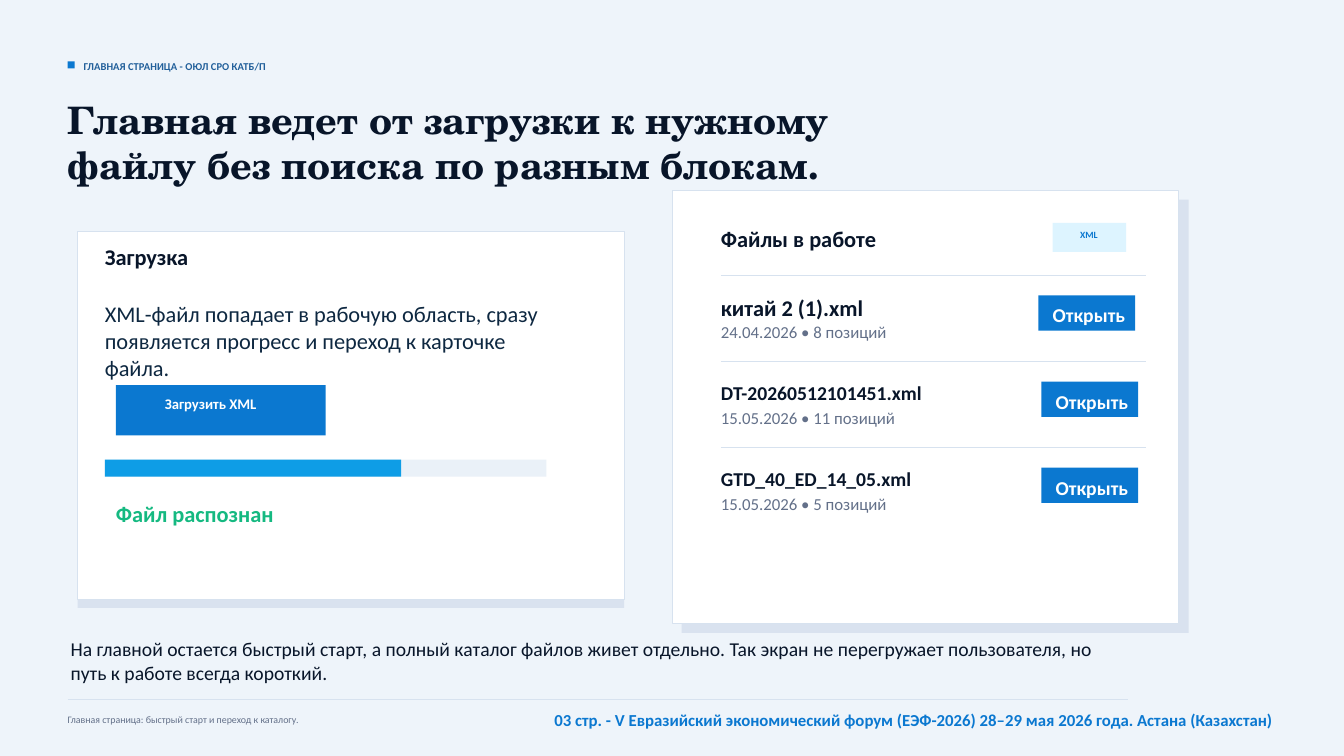
"""Build the slide about the home page: upload card, file list and footer."""
from dataclasses import dataclass

from lxml import etree
from pptx import Presentation
from pptx.dml.color import RGBColor
from pptx.enum.shapes import MSO_CONNECTOR, MSO_SHAPE
from pptx.enum.text import PP_ALIGN
from pptx.oxml.ns import qn
from pptx.util import Inches, Pt

RECT = MSO_SHAPE.RECTANGLE
LINE = MSO_CONNECTOR.STRAIGHT
LEFT, MID, RIGHT = PP_ALIGN.LEFT, PP_ALIGN.CENTER, PP_ALIGN.RIGHT
SANS, SERIF = "Calibri", "TeX Gyre Schola"
INK, NAVY, GREY = "081529", "0E2841", "637089"
BLUE, WHITE, EDGE, SHADE = "0B78D0", "FFFFFF", "D7E2EF", "D9E2EF"


@dataclass
class Box:
    x: float
    y: float
    w: float
    h: float
    fill: str
    edge: str = ""


@dataclass
class Text:
    x: float
    y: float
    w: float
    h: float
    text: str
    size: float
    color: str = INK
    bold: bool = True
    align: PP_ALIGN = LEFT
    font: str = SANS


@dataclass
class File:
    name: str
    meta: str
    size: float
    left: float


BOXES = [
    Box(0, 0, 13.33, 7.5, "EEF4FA"),
    Box(0.67, 0.61, 0.07, 0.07, BLUE),
    Box(0.77, 2.38, 5.42, 3.65, SHADE),
    Box(0.77, 2.3, 5.42, 3.65, WHITE, EDGE),
    Box(1.15, 3.82, 2.08, 0.5, BLUE),
    Box(1.04, 4.56, 4.38, 0.17, "EAF1F8"),
    Box(1.04, 4.56, 2.94, 0.17, "0E9DE6"),
    Box(6.76, 1.98, 5.03, 4.3, SHADE),
    Box(6.67, 1.89, 5.02, 4.3, WHITE, EDGE),
    Box(10.44, 2.21, 0.73, 0.29, "DDF4FF"),
]

TEXTS = [
    Text(0.83, 0.59, 3.75, 0.19, "ГЛАВНАЯ СТРАНИЦА - ОЮЛ СРО КАТБ/П", 7.5, "215F9A"),
    Text(0.67, 0.96, 8.12, 0.96,
         "Главная ведет от загрузки к нужному файлу без поиска по разным блокам.",
         27, font=SERIF),
    Text(1.04, 2.41, 1.67, 0.25, "Загрузка", 16),
    Text(1.04, 2.98, 4.64, 0.5,
         "XML-файл попадает в рабочую область, сразу появляется прогресс "
         "и переход к карточке файла.", 16, NAVY, False),
    Text(1.31, 3.92, 1.56, 0.19, "Загрузить XML", 10.5, WHITE, align=MID),
    Text(1.15, 4.96, 1.98, 0.19, "Файл распознан", 16, "15B981"),
    Text(7.15, 2.23, 2.19, 0.25, "Файлы в работе", 16),
    Text(10.56, 2.27, 0.48, 0.15, "XML", 6.8, BLUE, align=MID),
    Text(0.7, 6.32, 10.21, 0.4,
         "На главной остается быстрый старт, а полный каталог файлов живет отдельно. "
         "Так экран не перегружает пользователя, но путь к работе всегда короткий.",
         14, bold=False),
    Text(0.67, 7.08, 7.92, 0.19, "Главная страница: быстрый старт и переход к каталогу.",
         7.1, GREY, False),
    Text(5.19, 7.04, 7.44, 0.25,
         "03 стр. - V Евразийский экономический форум (ЕЭФ-2026) "
         "28–29 мая 2026 года. Астана (Казахстан)", 12, BLUE, align=RIGHT),
]

FILES = [
    File("китай 2 (1).xml", "24.04.2026 • 8 позиций", 16, 10.3),
    File("DT-20260512101451.xml", "15.05.2026 • 11 позиций", 14, 10.33),
    File("GTD_40_ED_14_05.xml", "15.05.2026 • 5 позиций", 14, 10.33),
]
TOP, PITCH = 2.73, 0.855


def rgb(code: str) -> RGBColor:
    return RGBColor.from_string(code)


def draw_box(slide, box: Box) -> None:
    shape = slide.shapes.add_shape(
        RECT, Inches(box.x), Inches(box.y), Inches(box.w), Inches(box.h))
    shape.shadow.inherit = False
    shape.fill.solid()
    shape.fill.fore_color.rgb = rgb(box.fill)
    if box.edge:
        shape.line.color.rgb = rgb(box.edge)
        shape.line.width = Pt(0.75)
    else:
        shape.line.fill.background()


def draw_text(slide, item: Text) -> None:
    frame = slide.shapes.add_textbox(
        Inches(item.x), Inches(item.y), Inches(item.w), Inches(item.h)).text_frame
    frame.word_wrap = True
    frame.margin_left = frame.margin_right = 0
    frame.margin_top = frame.margin_bottom = 0
    para = frame.paragraphs[0]
    para.text = item.text
    para.alignment = item.align
    para.font.name = item.font
    para.font.size = Pt(item.size)
    para.font.bold = item.bold
    para.font.color.rgb = rgb(item.color)


def draw_rule(slide, x: float, y: float, w: float) -> None:
    rule = slide.shapes.add_connector(
        LINE, Inches(x), Inches(y), Inches(x + w), Inches(y))
    rule.line.color.rgb = rgb(EDGE)
    rule.line.width = Pt(0.75)
    etree.SubElement(rule._element.spPr, qn("a:effectLst"))


def draw_file(slide, file: File, top: float) -> None:
    draw_rule(slide, 7.15, top, 4.22)
    draw_text(slide, Text(7.15, top + 0.19, 2.81, 0.21, file.name, file.size))
    draw_text(slide, Text(7.15, top + 0.46, 2.71, 0.19, file.meta, 12, GREY, False))
    draw_box(slide, Box(file.left, top + 0.2, 0.96, 0.35, BLUE))
    draw_text(slide, Text(file.left + 0.1, top + 0.28, 0.8, 0.16,
                          "Открыть", 14, WHITE, align=MID))


def main() -> None:
    deck = Presentation()
    deck.slide_width, deck.slide_height = Inches(13.33), Inches(7.5)
    slide = deck.slides.add_slide(deck.slide_layouts[6])
    for box in BOXES:
        draw_box(slide, box)
    for item in TEXTS:
        draw_text(slide, item)
    for row, file in enumerate(FILES):
        draw_file(slide, file, TOP + row * PITCH)
    draw_rule(slide, 0.67, 6.94, 10.52)
    deck.save("out.pptx")


if __name__ == "__main__":
    main()
